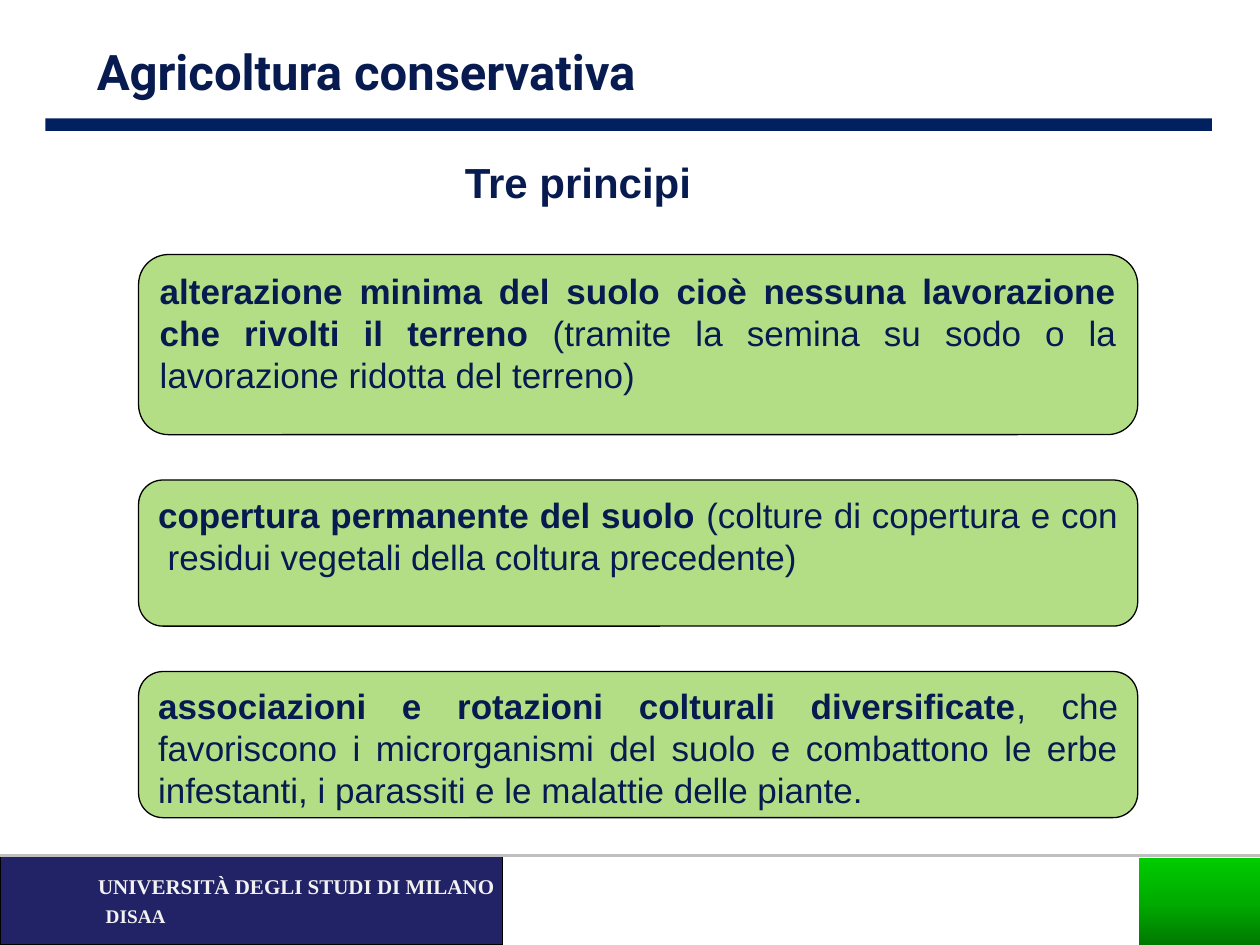
from copy import deepcopy

from pptx import Presentation
from pptx.dml.color import RGBColor
from pptx.enum import shapes, text
from pptx.oxml.ns import qn
from pptx.util import Inches, Pt

WIDTH, HEIGHT = 10, 7.5
NAVY_TEXT = RGBColor(0x07, 0x1B, 0x50)
NAVY_BAR = RGBColor(0x00, 0x20, 0x60)
FOOTER_BLUE = RGBColor(0x22, 0x22, 0x67)
FOOTER_TEXT = RGBColor(0xF2, 0xF2, 0xF2)
CARD_GREEN = RGBColor(0xB4, 0xDE, 0x86)
GREY = RGBColor(0xBF, 0xBF, 0xBF)
BLACK = RGBColor(0, 0, 0)
GREENS = [(0, RGBColor(0, 0x79, 0)), (0.5, RGBColor(0, 0xAC, 0)), (1, RGBColor(0, 0xCC, 0))]

# Content: labels as text, place, font; cards as height, bold part, plain part
LABELS = [
    ("DISAA", (0.74, 7.09, 0.98, 0.37),
     {"name": "Times New Roman", "size": Pt(11), "bold": True}, FOOTER_TEXT, 1.2),
    ("UNIVERSITÀ DEGLI STUDI DI MILANO", (0.68, 6.84, 3.53, 0.37),
     {"name": "Times New Roman", "size": Pt(12), "bold": True}, FOOTER_TEXT, 1.2),
    ("Agricoltura conservativa", (0.67, 0.28, 8.74, 0.57),
     {"name": "Roboto", "size": Pt(28), "bold": True}, NAVY_TEXT, 1),
    ("Tre principi", (3.59, 1.19, 2.39, 0.5),
     {"name": "Arial", "size": Pt(24), "bold": True}, NAVY_TEXT, 1),
]
CARDS = [
    (1.43, "alterazione minima del suolo cioè nessuna lavorazione che rivolti il terreno ",
     "(tramite la semina su sodo o la lavorazione ridotta del terreno)"),
    (1.16, "copertura permanente del suolo ",
     "(colture di copertura e con  residui vegetali della coltura precedente)"),
    (1.16, "associazioni e rotazioni colturali diversificate",
     ", che favoriscono i microrganismi del suolo e combattono le erbe infestanti, "
     "i parassiti e le malattie delle piante."),
]
CARD_LEFT, CARD_TOP, CARD_WIDTH, CARD_GAP = 1.1, 2.02, 7.93, 0.36
FOOTER_TOP = 6.79

deck = Presentation()
deck.slide_width, deck.slide_height = Inches(WIDTH), Inches(HEIGHT)
page = deck.slides.add_slide(deck.slide_layouts[6])


def add_panel(kind, place, fill=None, line=None):
    panel = page.shapes.add_shape(kind, *map(Inches, place))
    panel.shadow.inherit = False
    if fill is not None:
        panel.fill.solid()
        panel.fill.fore_color.rgb = fill
    if line is None:
        panel.line.fill.background()
    else:
        panel.line.color.rgb = line
        panel.line.width = Pt(0.75)
    return panel


def add_span(para, words, font, color):
    span = para.add_run()
    span.text = words
    for key, value in font.items():
        setattr(span.font, key, value)
    span.font.color.rgb = color


# Footer band, rule and green gradient block
RECTANGLE = shapes.MSO_SHAPE.RECTANGLE
add_panel(RECTANGLE, (0, FOOTER_TOP, 3.99, HEIGHT - FOOTER_TOP), FOOTER_BLUE, BLACK)
rule = page.shapes.add_connector(
    shapes.MSO_CONNECTOR.STRAIGHT, 0, Inches(FOOTER_TOP), Inches(WIDTH), Inches(FOOTER_TOP))
rule.line.color.rgb = GREY
rule.line.width = Pt(2.25)
properties = rule._element.spPr
properties.append(properties.makeelement(qn("a:effectLst"), {}))

block = add_panel(RECTANGLE, (9.04, 6.81, 0.96, HEIGHT - 6.81))
block.fill.gradient()
block.fill.gradient_angle = 90
stop_list = block._element.spPr.find(".//" + qn("a:gsLst"))
stop_list.append(deepcopy(stop_list[0]))
for stop, (position, color) in zip(block.fill.gradient_stops, GREENS):
    stop.position = position
    stop.color.rgb = color

# Bar under the title
add_panel(RECTANGLE, (0.36, 0.94, 9.26, 0.1), NAVY_BAR)

# Title, subtitle and footer labels
for words, place, font, color, spacing in LABELS:
    box = page.shapes.add_textbox(*map(Inches, place))
    box.text_frame.word_wrap = True
    para = box.text_frame.paragraphs[0]
    para.line_spacing = spacing
    add_span(para, words, font, color)

# The three principles, stacked with equal gaps
top = CARD_TOP
for height, strong, plain in CARDS:
    card = add_panel(shapes.MSO_SHAPE.ROUNDED_RECTANGLE,
                     (CARD_LEFT, top, CARD_WIDTH, height), CARD_GREEN, BLACK)
    card.text_frame.word_wrap = True
    card.text_frame.vertical_anchor = text.MSO_ANCHOR.TOP
    para = card.text_frame.paragraphs[0]
    para.alignment = text.PP_ALIGN.JUSTIFY
    para.space_after = Pt(6)
    for words, bold in ((strong, True), (plain, False)):
        add_span(para, words, {"name": "Arial", "size": Pt(20), "bold": bold}, NAVY_TEXT)
    top += height + CARD_GAP

deck.save("out.pptx")
